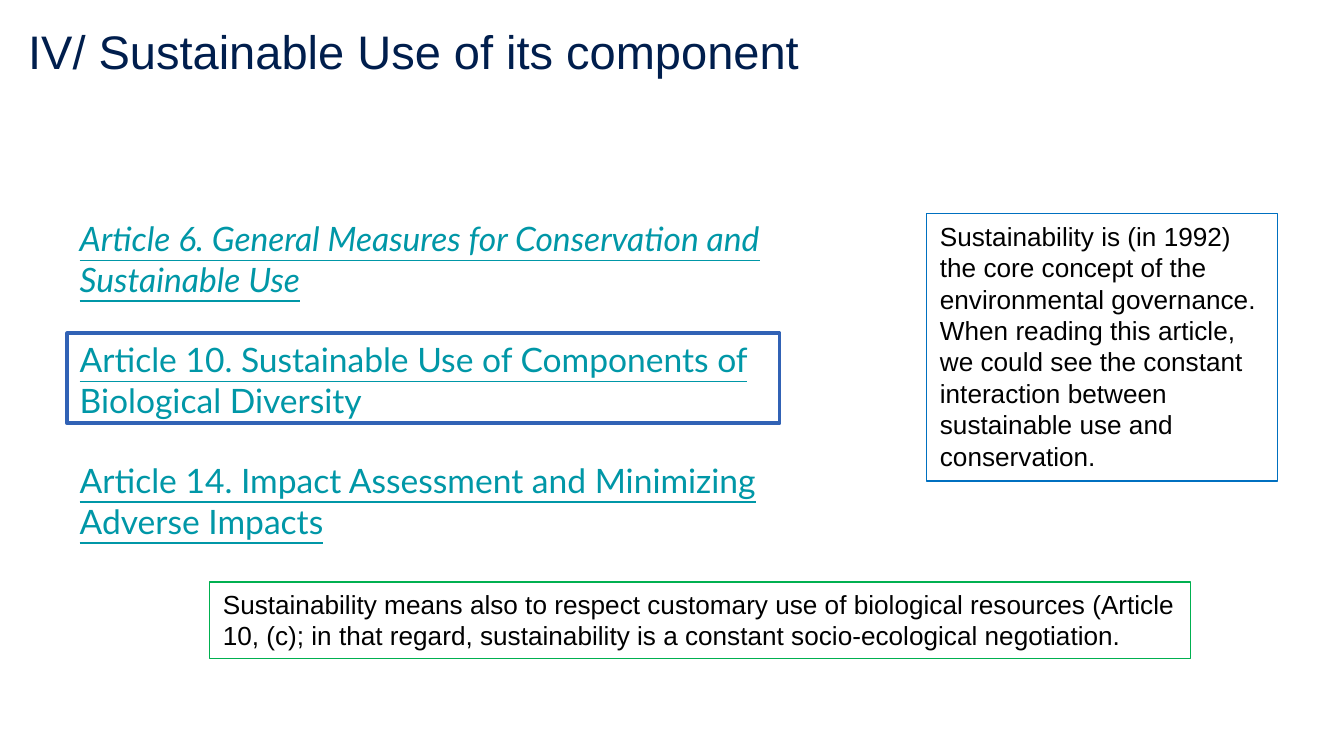
from pptx import Presentation
from pptx.dml.color import RGBColor
from pptx.enum.shapes import MSO_SHAPE
from pptx.enum.text import MSO_ANCHOR, PP_ALIGN
from pptx.util import Emu, Pt

RECTANGLE = MSO_SHAPE.RECTANGLE
TOP, BOTTOM = MSO_ANCHOR.TOP, MSO_ANCHOR.BOTTOM
LEFT = PP_ALIGN.LEFT
PX = 4572
COLORS = {
    "title": "001E4D",
    "article": "0097A7",
    "text": "000000",
    "concept": "0070C0",
    "highlight": "3162B5",
    "customary": "00B050",
}
ARTICLES = [
    ("Article 6. General Measures for Conservation and Sustainable Use", True),
    ("Article 10. Sustainable Use of Components of Biological Diversity", False),
    ("Article 14. Impact Assessment and Minimizing Adverse Impacts", False),
]
CONCEPT = [
    "Sustainability is (in 1992) the core concept of the environmental governance.",
    "When reading this article, we could see the constant interaction between "
    "sustainable use and conservation.",
]
CUSTOMARY = [
    "Sustainability means also to respect customary use of biological resources "
    "(Article 10, (c); in that regard, sustainability is a constant "
    "socio-ecological negotiation.",
]


def color(key):
    return RGBColor.from_string(COLORS[key])


def scaled(box):
    return [Emu(length * PX) for length in box]


def prepare(frame, anchor=TOP):
    frame.word_wrap = True
    frame.vertical_anchor = anchor
    return frame


def add_run(paragraph, text, size, font, key):
    paragraph.alignment = LEFT
    run = paragraph.add_run()
    run.text = text
    run.font.size = Pt(size)
    run.font.name = font
    run.font.color.rgb = color(key)
    return run


def next_paragraph(frame, index):
    return frame.add_paragraph() if index else frame.paragraphs[0]


def place_title(slide, box, text):
    title = slide.shapes.title
    title.left, title.top, title.width, title.height = scaled(box)
    frame = prepare(title.text_frame, BOTTOM)
    frame.margin_left = frame.margin_right = Emu(20 * PX)
    frame.margin_top = frame.margin_bottom = Emu(20 * PX)
    add_run(frame.paragraphs[0], text, 25.2, "Arial", "title")


def add_articles(slide, box):
    frame = prepare(slide.shapes.add_textbox(*scaled(box)).text_frame)
    for index, (text, italic) in enumerate(ARTICLES):
        paragraph = next_paragraph(frame, index)
        if index:
            paragraph.space_before = Pt(21.6)
        article = add_run(paragraph, text, 18, "Lato", "article")
        article.font.italic = italic
        article.font.underline = True


def add_outline(slide, box, key, weight):
    outline = slide.shapes.add_shape(RECTANGLE, *scaled(box))
    outline.shadow.inherit = False
    outline.fill.background()
    outline.line.color.rgb = color(key)
    outline.line.width = Pt(weight)
    return outline


def add_note(slide, box, key, texts):
    frame = prepare(add_outline(slide, box, key, 0.75).text_frame)
    for index, text in enumerate(texts):
        add_run(next_paragraph(frame, index), text, 14, "Arial", "text")


def main():
    deck = Presentation()
    deck.slide_width, deck.slide_height = scaled((2000, 1125))
    slide = deck.slides.add_slide(deck.slide_layouts[5])
    place_title(slide, (22, 11, 1864, 126), "IV/ Sustainable Use of its component")
    add_articles(slide, (99, 315, 1160, 552))
    add_note(slide, (1379, 318, 522, 398), "concept", CONCEPT)
    add_outline(slide, (100, 496, 1060, 134), "highlight", 2)
    add_note(slide, (312, 866, 1460, 114), "customary", CUSTOMARY)
    deck.save("out.pptx")


if __name__ == "__main__":
    main()
